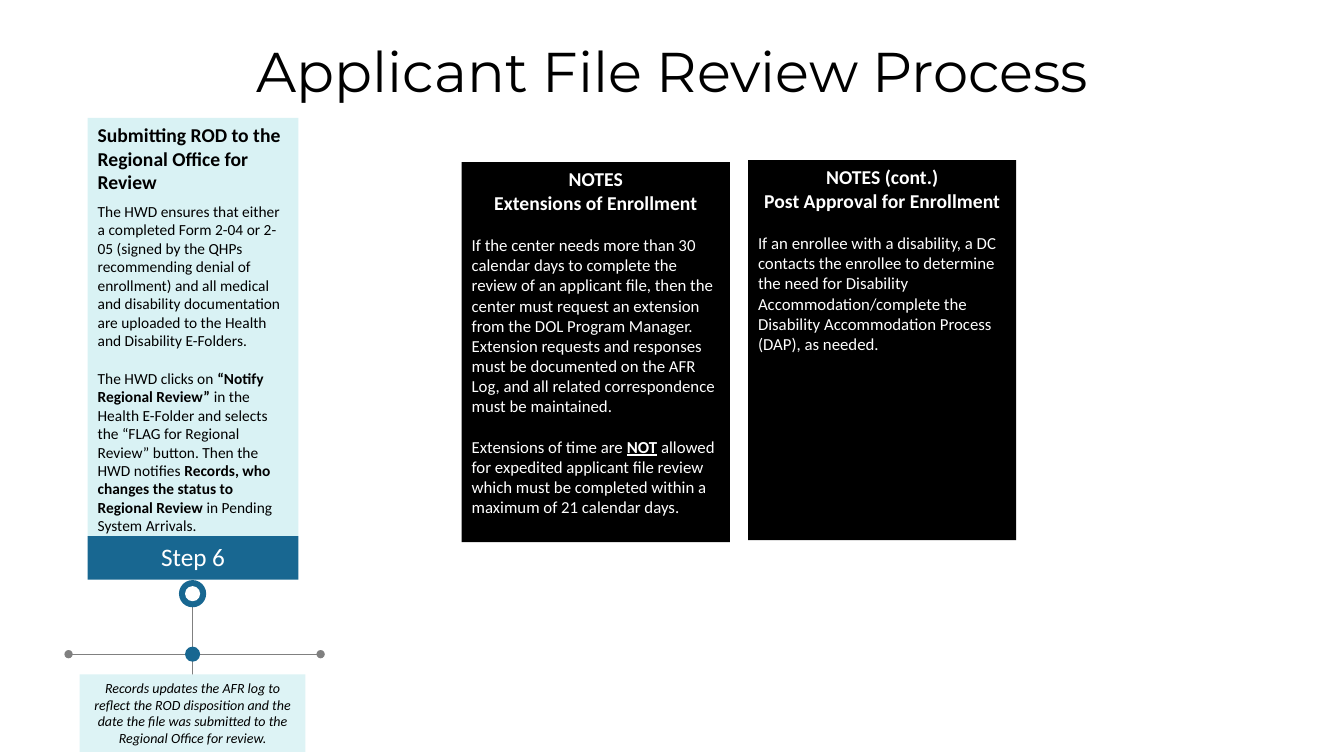
"""Build the Applicant File Review Process slide for Step 6."""
from dataclasses import dataclass

from lxml import etree
from pptx import Presentation
from pptx.dml.color import RGBColor
from pptx.enum.shapes import MSO_CONNECTOR, MSO_SHAPE
from pptx.enum.text import MSO_ANCHOR, PP_ALIGN
from pptx.oxml.ns import qn
from pptx.util import Inches, Pt

LEFT, CENTER = PP_ALIGN.LEFT, PP_ALIGN.CENTER
TOP, MIDDLE = MSO_ANCHOR.TOP, MSO_ANCHOR.MIDDLE
RECTANGLE, OVAL = MSO_SHAPE.RECTANGLE, MSO_SHAPE.OVAL
STRAIGHT = MSO_CONNECTOR.STRAIGHT


@dataclass(frozen=True)
class Theme:
    black: str = "000000"
    white: str = "FFFFFF"
    blue: str = "186791"
    panel: str = "D9F2F4"
    record: str = "DDF3F5"
    gray: str = "808080"
    title_font: str = "Montserrat"
    body_font: str = "Calibri"
    title: int = 40
    step: int = 18
    heading: int = 14
    note: int = 12
    body: int = 11
    small: int = 10


THEME = Theme()
CELL = Inches(0.1)
BLANK_LINE = 1.22


def write(para, text, size, color=THEME.black, font=THEME.body_font, align=LEFT,
          before=0, bold=False, italic=False, marks=()):
    """Write text into a paragraph, with the marked pieces in bold."""
    para.alignment = align
    para.space_before = Pt(before)
    pieces = [(text, bold)]
    for mark in marks:
        rest, _ = pieces.pop()
        lead, _, tail = rest.partition(mark)
        pieces += [(lead, bold), (mark, True), (tail, bold)]
    for words, strong in pieces:
        span = para.add_run()
        span.text = words
        span.font.name = font
        span.font.size = Pt(size)
        span.font.bold = strong
        span.font.italic = italic
        span.font.underline = words == "NOT"
        span.font.color.rgb = RGBColor.from_string(color)


def add_box(kind, left, top, width, height, fill, paragraphs=()):
    """Add a filled shape on the grid, with one dict of format per paragraph."""
    box = slide.shapes.add_shape(kind, *(round(n * CELL) for n in (left, top, width, height)))
    box.shadow.inherit = False
    box.fill.solid()
    box.fill.fore_color.rgb = RGBColor.from_string(fill)
    box.line.fill.background()
    frame = box.text_frame
    frame.word_wrap = True
    frame.vertical_anchor = TOP
    for index, content in enumerate(paragraphs):
        write(frame.add_paragraph() if index else frame.paragraphs[0], **content)


deck = Presentation()
deck.slide_width, deck.slide_height = Inches(13.33), Inches(7.5)
slide = deck.slides.add_slide(deck.slide_layouts[5])

title = slide.shapes.title
title.left, title.top, title.width, title.height = (
    round(n * CELL) for n in (13.3, 3.1, 106.8, 7.7))
title.text_frame.vertical_anchor = MIDDLE
write(title.text_frame.paragraphs[0], "Applicant File Review Process", THEME.title,
      font=THEME.title_font, align=CENTER)

axis, timeline = 19.1, 64.9
for start_x, start_y, end_x, end_y, ends in (
        (6.8, timeline, 31.8, timeline, ("headEnd", "tailEnd")),
        (axis, 59.7, axis, 67.3, ())):
    line = slide.shapes.add_connector(
        STRAIGHT, *(round(n * CELL) for n in (start_x, start_y, end_x, end_y)))
    line.line.color.rgb = RGBColor.from_string(THEME.gray)
    line.line.width = Pt(0.5)
    for end in ends:
        etree.SubElement(line.line._get_or_add_ln(), qn(f"a:{end}"), type="oval")
    etree.SubElement(line._element.spPr, qn("a:effectLst"))

for middle, diameter, color in (
        (58.9, 2.7, THEME.blue), (58.9, 1.5, THEME.white), (timeline, 1.5, THEME.blue)):
    add_box(OVAL, axis - diameter / 2, middle - diameter / 2, diameter, diameter, color)

panel_left, panel_top, panel_width, panel_height = 8.7, 11.7, 20.9, 41.5
add_box(RECTANGLE, panel_left, panel_top, panel_width, panel_height, THEME.panel, [
    dict(text="Submitting ROD to the Regional Office for Review",
         size=THEME.heading, before=6, bold=True),
    dict(text="The HWD ensures that either a completed Form 2-04 or 2-05 (signed by the QHPs "
              "recommending denial of enrollment) and all medical and disability documentation "
              "are uploaded to the Health and Disability E-Folders.",
         size=THEME.body, before=6),
    dict(text="The HWD clicks on “Notify Regional Review” in the Health E-Folder and selects "
              "the “FLAG for Regional Review” button. Then the HWD notifies Records, who "
              "changes the status to Regional Review in Pending System Arrivals.",
         size=THEME.body, before=THEME.body * BLANK_LINE,
         marks=("“Notify Regional Review” ",
                "Records, who changes the status to Regional Review")),
])
add_box(RECTANGLE, panel_left, panel_top + panel_height, panel_width, 4.3, THEME.blue,
        [dict(text="Step 6", size=THEME.step, color=THEME.white, align=CENTER)])
add_box(RECTANGLE, 7.9, 66.9, 22.4, 7.7, THEME.record, [
    dict(text="Records updates the AFR log to reflect the ROD disposition and the date the "
              "file was submitted to the Regional Office for review.",
         size=THEME.small, align=CENTER, italic=True)])

notes = (
    (45.8, 16.1, ("NOTES", "Extensions of Enrollment"), (
        ("If the center needs more than 30 calendar days to complete the review of an "
         "applicant file, then the center must request an extension from the DOL Program "
         "Manager. Extension requests and responses must be documented on the AFR Log, and "
         "all related correspondence must be maintained.", ()),
        ("Extensions of time are NOT allowed for expedited applicant file review which must "
         "be completed within a maximum of 21 calendar days.", ("NOT",)))),
    (74.2, 15.9, ("NOTES (cont.)", "Post Approval for Enrollment"), (
        ("If an enrollee with a disability, a DC contacts the enrollee to determine the need "
         "for Disability Accommodation/complete the Disability Accommodation Process (DAP), "
         "as needed.", ()),)),
)
for left, top, headings, texts in notes:
    add_box(RECTANGLE, left, top, 26.6, 37.7, THEME.black, [
        dict(text=heading, size=THEME.heading, color=THEME.white, align=CENTER, bold=True)
        for heading in headings
    ] + [
        dict(text=text, size=THEME.note, color=THEME.white,
             before=THEME.note * BLANK_LINE, marks=marks)
        for text, marks in texts
    ])

deck.save("out.pptx")
